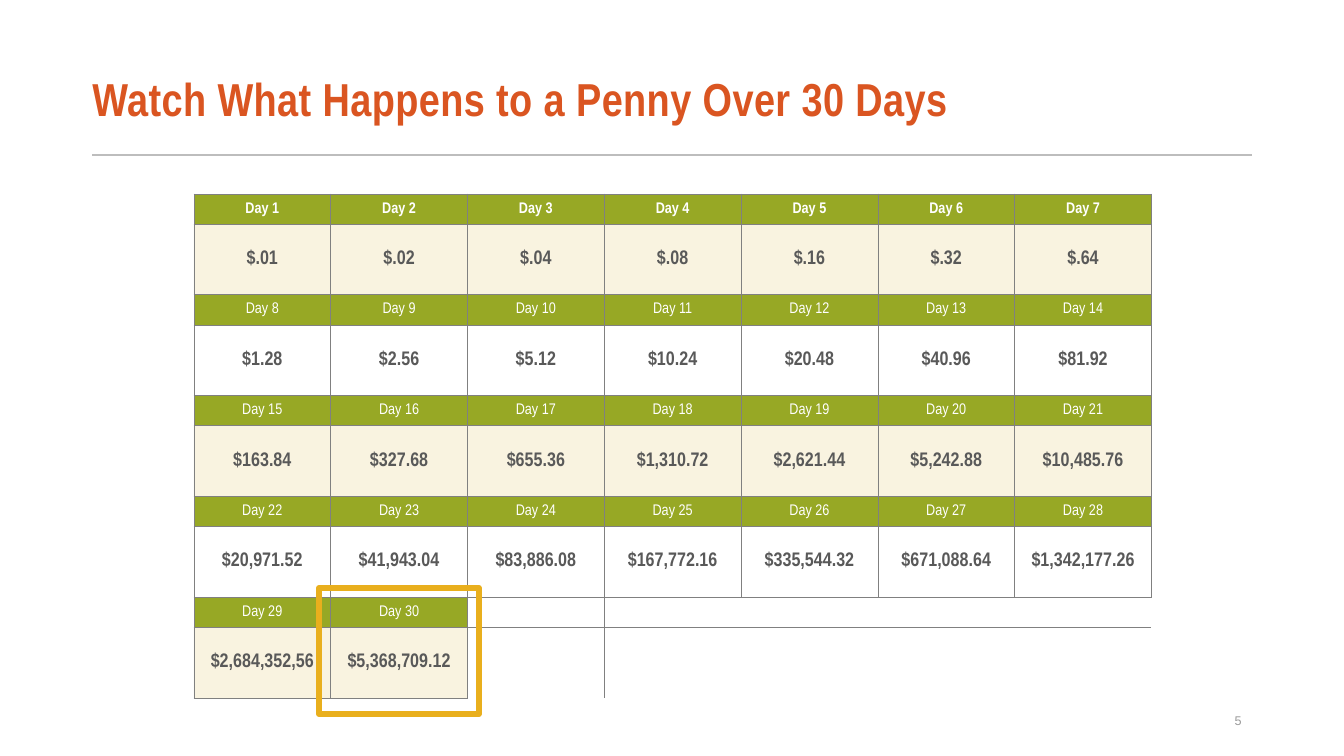
from lxml.etree import SubElement
from pptx import Presentation
from pptx.dml.color import RGBColor
from pptx.enum.shapes import MSO_CONNECTOR, MSO_SHAPE
from pptx.enum.text import MSO_ANCHOR, PP_ALIGN
from pptx.oxml.ns import qn
from pptx.util import Pt

WHITE = RGBColor(0xFF, 0xFF, 0xFF)
ORANGE = RGBColor(0xDA, 0x55, 0x21)
GREEN = RGBColor(0x97, 0xA8, 0x25)
CREAM = RGBColor(0xF7, 0xEE, 0xD4)
GOLD = RGBColor(0xE9, 0xAF, 0x1D)
DARK = RGBColor(0x59, 0x59, 0x59)
GREY = RGBColor(0x80, 0x80, 0x80)
SILVER = RGBColor(0xBD, 0xBD, 0xBD)
PALE = RGBColor(0x9A, 0x9A, 0x9A)

NARROW = "Arial Narrow"
NO_STYLE = "{2D5ABB26-0587-4C30-8999-92F81FD0307C}"
DAYS = 7
WEEKS = [
    ["$.01", "$.02", "$.04", "$.08", "$.16", "$.32", "$.64"],
    ["$1.28", "$2.56", "$5.12", "$10.24", "$20.48", "$40.96", "$81.92"],
    ["$163.84", "$327.68", "$655.36", "$1,310.72", "$2,621.44",
     "$5,242.88", "$10,485.76"],
    ["$20,971.52", "$41,943.04", "$83,886.08", "$167,772.16",
     "$335,544.32", "$671,088.64", "$1,342,177.26"],
    ["$2,684,352,56", "$5,368,709.12"],
]


def apply(target, values):
    for name, value in values.items():
        setattr(target, name, value)


def style(run, size, color, face=NARROW, bold=False):
    apply(run.font, {"size": Pt(size), "name": face, "bold": bold})
    run.font.color.rgb = color


def add_text(slide, text, left, top, width, height, align, inset):
    box = slide.shapes.add_textbox(Pt(left), Pt(top), Pt(width), Pt(height))
    apply(box.text_frame, {
        "word_wrap": True, "vertical_anchor": MSO_ANCHOR.MIDDLE,
        "margin_left": Pt(inset), "margin_right": Pt(7.2),
        "margin_top": Pt(3.6), "margin_bottom": Pt(3.6)})
    para = box.text_frame.paragraphs[0]
    para.alignment = align
    run = para.add_run()
    run.text = text
    return para, run


def add_title(slide):
    para, run = add_text(slide, "Watch What Happens to a Penny Over 30 Days",
                         66, 39, 828, 68.4, PP_ALIGN.LEFT, 0)
    para.line_spacing = 0.87
    style(run, 33, ORANGE, bold=True)
    run.font._element.set("spc", "30")


def add_rule(slide):
    line = slide.shapes.add_connector(
        MSO_CONNECTOR.STRAIGHT, Pt(66), Pt(111), Pt(894), Pt(111))
    line.line.color.rgb = SILVER
    line.line.width = Pt(1.5)
    SubElement(line._element.spPr, qn("a:effectLst"))


def add_edges(cell, sides):
    props = cell._tc.get_or_add_tcPr()
    for side in sides:
        edge = SubElement(props, qn(f"a:ln{side}"), w=str(Pt(0.5)))
        fill = SubElement(edge, qn("a:solidFill"))
        SubElement(fill, qn("a:srgbClr"), val=str(GREY))


def fill_cell(cell, text, size, color, bold, back, sides):
    apply(cell, {
        "vertical_anchor": MSO_ANCHOR.MIDDLE,
        "margin_left": Pt(5.4), "margin_right": Pt(5.4),
        "margin_top": Pt(2.7), "margin_bottom": Pt(2.7)})
    add_edges(cell, sides)
    cell.fill.solid()
    cell.fill.fore_color.rgb = back
    if back == CREAM:
        tint = cell._tc.tcPr.find(".//" + qn("a:solidFill") + "/" + qn("a:srgbClr")
                                  + f"[@val='{CREAM}']")
        SubElement(tint, qn("a:alpha"), val="70000")
    para = cell.text_frame.paragraphs[0]
    para.alignment = PP_ALIGN.CENTER
    if text:
        run = para.add_run()
        run.text = text
        style(run, size, color, bold=bold)
    else:
        SubElement(para._p, qn("a:endParaRPr"), sz=str(size * 100))


def add_days(slide):
    frame = slide.shapes.add_table(2 * len(WEEKS), DAYS, Pt(138.5), Pt(138.5),
                                   Pt(684), Pt(360))
    table = frame.table
    apply(table, {"first_row": False, "horz_banding": False})
    table._tbl.tblPr.find(qn("a:tableStyleId")).text = NO_STYLE
    for col in table.columns:
        col.width = Pt(684 / DAYS)
    for week, sums in enumerate(WEEKS):
        head, body = 2 * week, 2 * week + 1
        table.rows[head].height = Pt(21.6)
        table.rows[body].height = Pt(50.4)
        back = WHITE if week % 2 else CREAM
        for col in range(DAYS):
            top, low = table.cell(head, col), table.cell(body, col)
            if col < len(sums):
                day = f"Day {week * DAYS + col + 1}"
                fill_cell(top, day, 11, WHITE, week == 0, GREEN, "LRTB")
                fill_cell(low, sums[col], 14, DARK, True, back, "LRTB")
            else:
                # Unused days keep only the edges they share
                left = "L" if col == len(sums) else ""
                fill_cell(top, "", 11, WHITE, False, WHITE, left + "T")
                fill_cell(low, "", 14, DARK, False, WHITE, left)


def add_frame(slide):
    box = slide.shapes.add_shape(MSO_SHAPE.RECTANGLE, Pt(228), Pt(420),
                                 Pt(114), Pt(90))
    box.shadow.inherit = False
    box.fill.background()
    box.line.color.rgb = GOLD
    box.line.width = Pt(4.5)


def main():
    deck = Presentation()
    apply(deck, {"slide_width": Pt(960), "slide_height": Pt(540)})
    slide = deck.slides.add_slide(deck.slide_layouts[6])

    # Heading
    add_rule(slide)
    add_title(slide)

    # Page number
    _, page = add_text(slide, "5", 678, 500.5, 216, 28.8, PP_ALIGN.RIGHT, 7.2)
    style(page, 9, PALE, face="Arial")

    # Calendar and highlight on the last day
    add_days(slide)
    add_frame(slide)
    deck.save("out.pptx")


if __name__ == "__main__":
    main()
